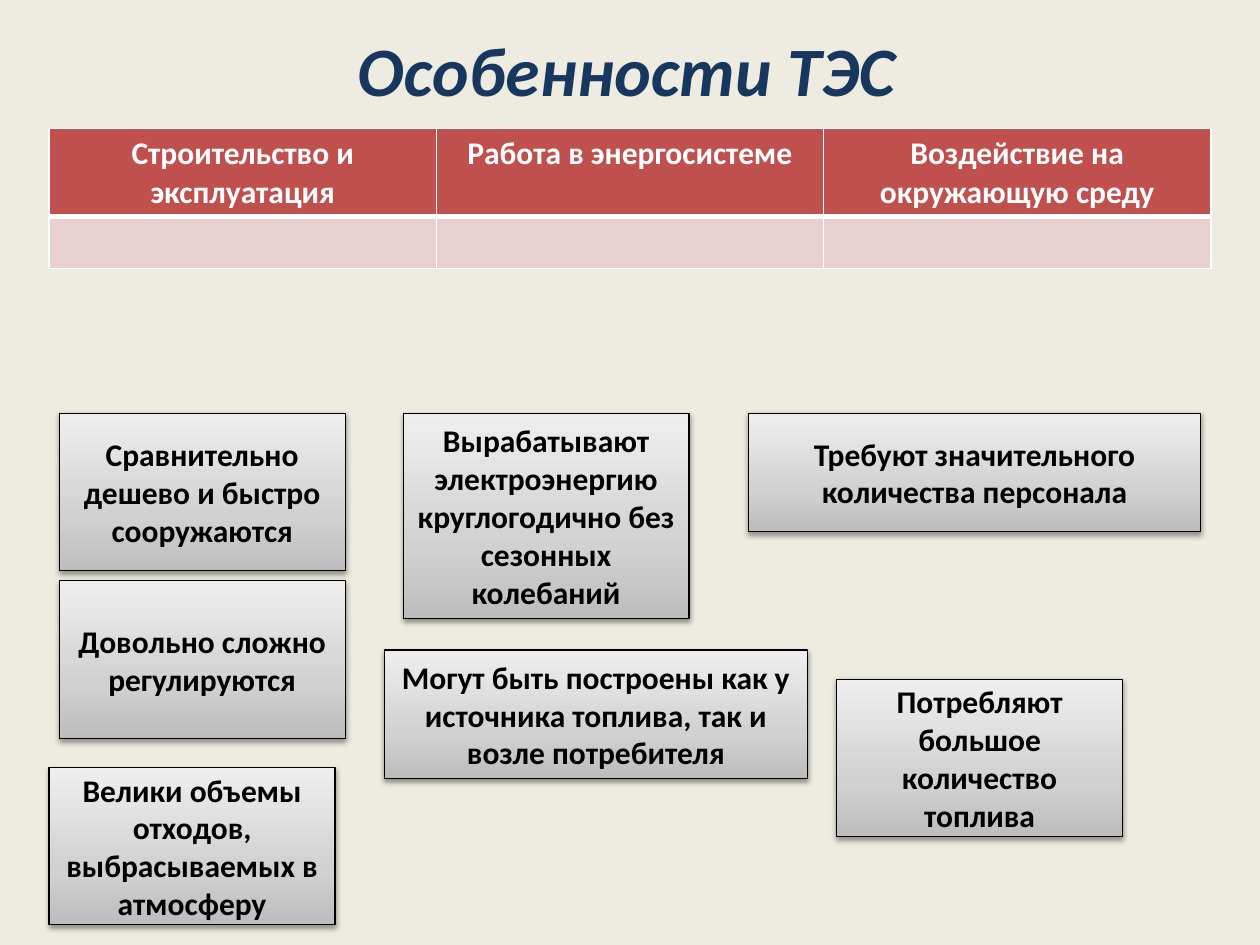
from copy import deepcopy
from lxml import etree
from pptx import Presentation
from pptx.dml.color import RGBColor
from pptx.enum import shapes, text
from pptx.oxml import ns
from pptx.util import Inches, Pt


def rgb(value):
    return RGBColor.from_string(value)


def write(tf, words, size, color, italic=False):
    tf.word_wrap = True
    tf.text = words
    p = tf.paragraphs[0]
    p.alignment = text.PP_ALIGN.CENTER
    for r in p.runs:
        r.font.name = "Calibri"
        r.font.size = Pt(size)
        r.font.bold = True
        r.font.italic = italic
        r.font.color.rgb = rgb(color)


prs = Presentation()
prs.slide_width = Inches(10)
prs.slide_height = Inches(7.5)
s = prs.slides.add_slide(prs.slide_layouts[6])
s.background.fill.solid()
s.background.fill.fore_color.rgb = rgb("EEECE1")

title = s.shapes.add_textbox(Inches(0.47), Inches(0.23), Inches(9), Inches(0.64))
title.text_frame.vertical_anchor = text.MSO_ANCHOR.MIDDLE
write(title.text_frame, "Особенности ТЭС", 39.6, "17375E", italic=True)

headers = ["Строительство и эксплуатация", "Работа в энергосистеме", "Воздействие на окружающую среду"]
table = s.shapes.add_table(2, 3, Inches(0.39), Inches(1.02), Inches(9.22), Inches(1.11)).table
table.rows[0].height = Inches(0.7)
table.rows[1].height = Inches(0.41)
for row, color in enumerate(["C0504D", "E8D0D0"]):
    for col, header in enumerate(headers):
        cell = table.cell(row, col)
        if row == 0:
            write(cell.text_frame, header, 18, "FFFFFF")
        tcPr = cell._tc.get_or_add_tcPr()
        for side in ["lnL", "lnR", "lnT", "lnB"]:
            thick = (row, side) in [(0, "lnB"), (1, "lnT")]
            ln = etree.SubElement(tcPr, ns.qn("a:" + side), w=str(Pt(3 if thick else 1)))
            solid = etree.SubElement(ln, ns.qn("a:solidFill"))
            etree.SubElement(solid, ns.qn("a:srgbClr"), val="FFFFFF")
        cell.fill.solid()
        cell.fill.fore_color.rgb = rgb(color)

cards = [
    (0.47, 3.28, 2.27, 1.25, "Сравнительно дешево и быстро сооружаются"),
    (3.2, 3.28, 2.27, 1.63, "Вырабатывают электроэнергию круглогодично без сезонных колебаний"),
    (6.64, 5.39, 2.27, 1.25, "Потребляют большое количество топлива"),
    (5.94, 3.28, 3.59, 0.94, "Требуют значительного количества персонала"),
    (0.47, 4.61, 2.27, 1.25, "Довольно сложно регулируются"),
    (3.05, 5.16, 3.36, 1.02, "Могут быть построены как у источника топлива, так и возле потребителя"),
    (0.39, 6.09, 2.27, 1.25, "Велики объемы отходов, выбрасываемых в атмосферу"),
]
stops = [(0, "BDBDBD"), (0.35, "D1D1D1"), (1, "EEEEEE")]
for x, y, w, h, words in cards:
    sp = s.shapes.add_shape(shapes.MSO_SHAPE.RECTANGLE, Inches(x), Inches(y), Inches(w), Inches(h))
    sp.line.color.rgb = rgb("000000")
    sp.line.width = Pt(0.75)
    sp.fill.gradient()
    sp.fill.gradient_angle = 90
    gs = sp._element.spPr.find(".//" + ns.qn("a:gs"))
    gs.addnext(deepcopy(gs))
    for stop, (position, color) in zip(sp.fill.gradient_stops, stops):
        stop.position = position
        stop.color.rgb = rgb(color)
    sp.shadow.inherit = False
    effects = sp._element.spPr.find(ns.qn("a:effectLst"))
    shadow = etree.SubElement(effects, ns.qn("a:outerShdw"), blurRad=str(Pt(3.1)),
                              dist=str(Pt(1.6)), dir="5400000", rotWithShape="0")
    black = etree.SubElement(shadow, ns.qn("a:srgbClr"), val="000000")
    etree.SubElement(black, ns.qn("a:alpha"), val="38000")
    sp.text_frame.vertical_anchor = text.MSO_ANCHOR.MIDDLE
    write(sp.text_frame, words, 18, "000000")

prs.save("out.pptx")
